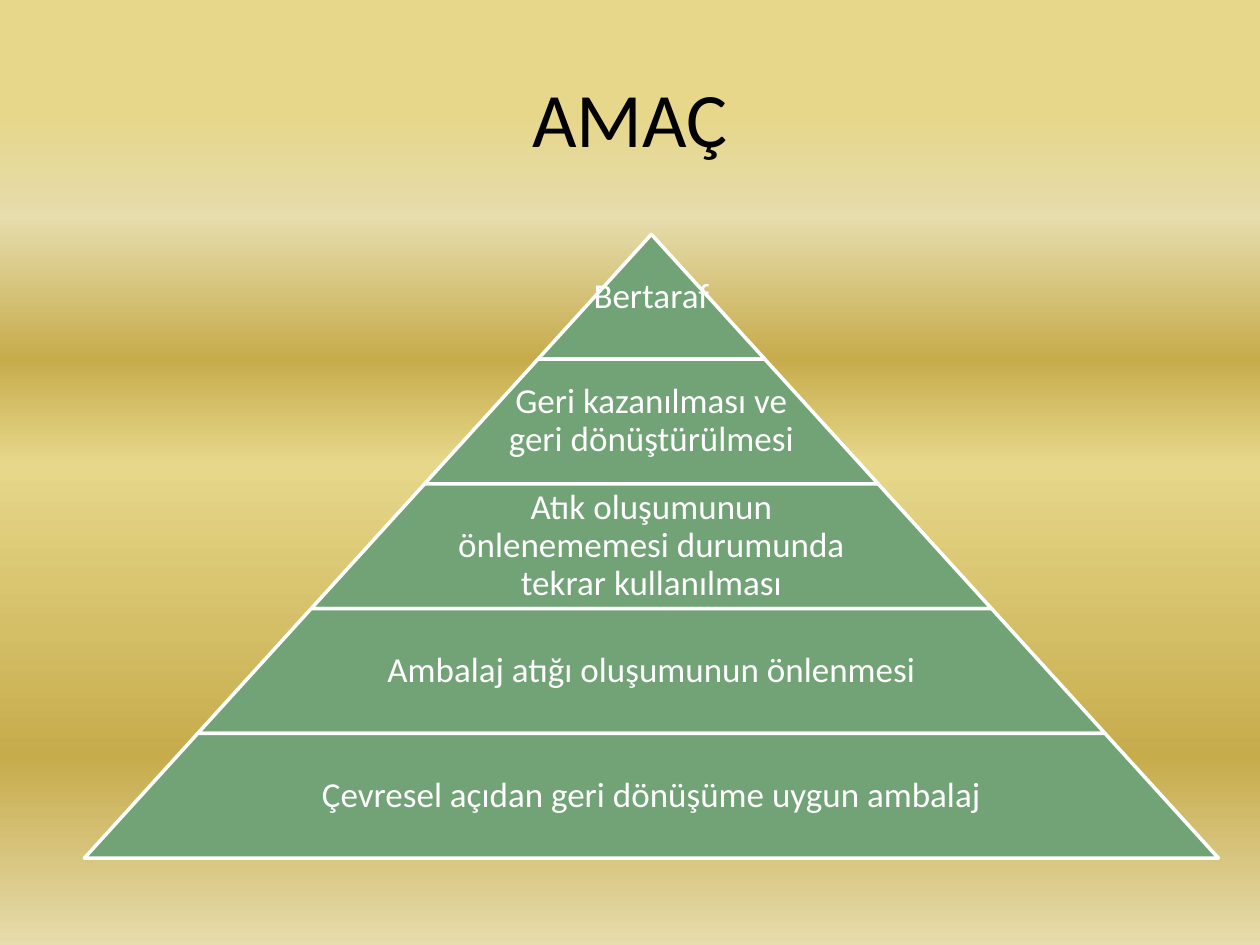
from dataclasses import dataclass

import lxml.etree
import pptx
import pptx.dml.color
import pptx.enum.shapes
import pptx.enum.text
import pptx.oxml.ns
import pptx.util

Inches = pptx.util.Inches
COLORS = {"text": "000000", "level": "72A376", "light": "FFFFFF"}
STOPS = [(12, "E6D78A"), (23, "E6DCAC"), (38, "C7AC4C"),
         (49, "E6D78A"), (80, "C7AC4C"), (100, "E6DCAC")]

MID = 5.17    # centre line of the pyramid
TOP = 1.86
STEP = 1.8    # growth in width from one level to the next
HIGH = 0.99
INSET = 0.03


@dataclass
class Level:
    rank: int
    text: str
    share: float = 0.65  # part of the width open to text

    @property
    def width(self) -> float:
        return self.rank * STEP

    @property
    def top(self) -> float:
        return TOP + (self.rank - 1) * HIGH


LEVELS = [
    Level(1, "Bertaraf", share=1),
    Level(2, "Geri kazanılması ve geri dönüştürülmesi"),
    Level(3, "Atık oluşumunun önlenememesi durumunda tekrar kullanılması"),
    Level(4, "Ambalaj atığı oluşumunun önlenmesi"),
    Level(5, "Çevresel açıdan geri dönüşüme uygun ambalaj"),
]


def color(name: str) -> pptx.dml.color.RGBColor:
    return pptx.dml.color.RGBColor.from_string(COLORS[name])


def add_text(shapes, text: str, left: float, top: float, width: float,
             height: float, *, size: int, ink: str, inset: float = 0.1,
             space: float = 1.0) -> None:
    box = shapes.add_textbox(Inches(left), Inches(top), Inches(width), Inches(height))
    frame = box.text_frame
    frame.word_wrap = True
    frame.vertical_anchor = pptx.enum.text.MSO_ANCHOR.MIDDLE
    frame.margin_left = frame.margin_right = Inches(inset)
    frame.margin_top = frame.margin_bottom = Inches(min(inset, 0.05))
    line = frame.paragraphs[0]
    line.alignment = pptx.enum.text.PP_ALIGN.CENTER
    line.line_spacing = space
    run = line.add_run()
    run.text = text
    run.font.name = "Calibri"
    run.font.size = pptx.util.Pt(size)
    run.font.color.rgb = color(ink)


def add_level(shapes, level: Level) -> None:
    shape = shapes.add_shape(
        pptx.enum.shapes.MSO_SHAPE.TRAPEZOID, Inches(MID - level.width / 2),
        Inches(level.top), Inches(level.width), Inches(HIGH))
    shape.adjustments[0] = STEP / 2 / HIGH
    shape.shadow.inherit = False
    shape.fill.solid()
    shape.fill.fore_color.rgb = color("level")
    shape.line.color.rgb = color("light")
    shape.line.width = pptx.util.Pt(2)
    width = level.width * level.share
    add_text(shapes, level.text, MID - width / 2, level.top, width, HIGH,
             size=20, ink="light", inset=INSET, space=0.9)


def paint_back(slide) -> None:
    """Fill the background with the gold bands, top to bottom."""
    fill = slide.background.fill
    fill.gradient()
    fill.gradient_angle = 270
    qn = pptx.oxml.ns.qn
    stops = slide.element.xpath(".//p:bg//a:gsLst")[0]
    for old in list(stops):
        stops.remove(old)
    for place, tone in STOPS:
        stop = lxml.etree.SubElement(stops, qn("a:gs"), pos=str(place * 1000))
        lxml.etree.SubElement(stop, qn("a:srgbClr"), val=tone)


def main() -> None:
    deck = pptx.Presentation()
    deck.slide_width, deck.slide_height = Inches(10), Inches(7.5)
    slide = deck.slides.add_slide(deck.slide_layouts[6])
    paint_back(slide)
    add_text(slide.shapes, "AMAÇ", 0.5, 0.3, 9, 1.25, size=44, ink="text")
    group = slide.shapes.add_group_shape()
    for level in LEVELS:
        add_level(group.shapes, level)
    deck.save("out.pptx")


if __name__ == "__main__":
    main()
